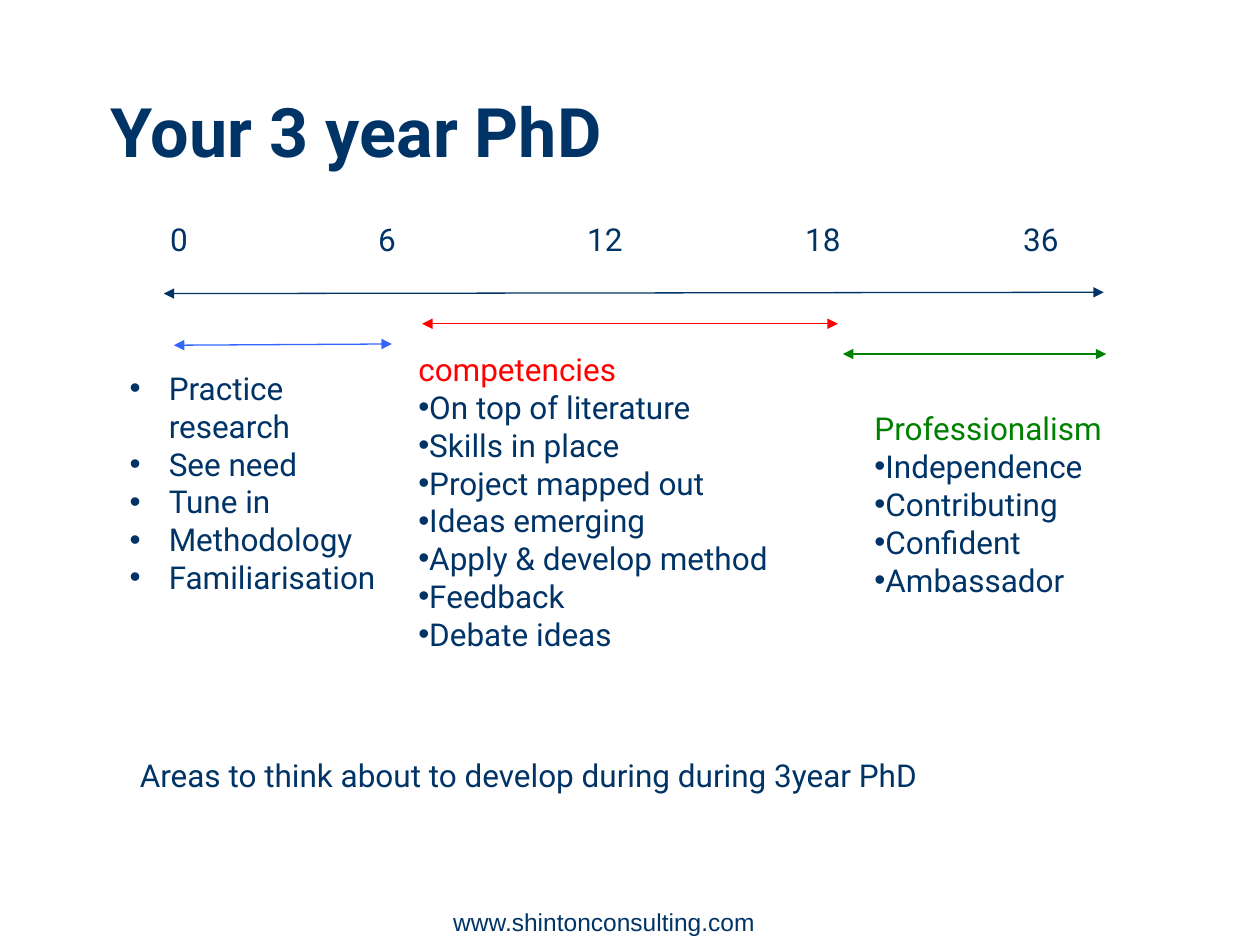
from lxml import etree
from pptx import Presentation
from pptx.dml.color import RGBColor
from pptx.enum.shapes import MSO_CONNECTOR
from pptx.enum.text import MSO_ANCHOR, MSO_AUTO_SIZE, PP_ALIGN
from pptx.oxml.ns import qn
from pptx.util import Inches, Pt

STRAIGHT = MSO_CONNECTOR.STRAIGHT
BOTTOM = MSO_ANCHOR.BOTTOM
FIT_SHAPE = MSO_AUTO_SIZE.SHAPE_TO_FIT_TEXT
NO_FIT = MSO_AUTO_SIZE.NONE
CENTER = PP_ALIGN.CENTER

NAVY = RGBColor(0x00, 0x33, 0x66)
RED = RGBColor(0xFF, 0x00, 0x00)
BLUE = RGBColor(0x33, 0x66, 0xFF)
GREEN = RGBColor(0x00, 0x80, 0x00)

MONTHS = [("0", 1.3, 0.25), ("6", 2.95, 0.25), ("12", 4.61, 0.39),
          ("18", 6.34, 0.39), ("36", 8.07, 0.39)]
# Start and end points of the whole timeline and of its three stages
SPANS = [((1.3, 2.33), (8.76, 2.32), NAVY),
         ((1.38, 2.74), (3.11, 2.73), BLUE),
         ((3.35, 2.57), (6.65, 2.57), RED),
         ((6.69, 2.81), (8.78, 2.81), GREEN)]

EARLY_STEPS = ["Practice research", "See need", "Tune in", "Methodology",
               "Familiarisation"]
COMPETENCIES = ["On top of literature", "Skills in place", "Project mapped out",
                "Ideas emerging", "Apply & develop method", "Feedback",
                "Debate ideas"]
PROFESSIONALISM = ["Independence", "Contributing", "Confident", "Ambassador"]


def add_frame(slide, box, wrap=True, fit=FIT_SHAPE):
    frame = slide.shapes.add_textbox(*map(Inches, box)).text_frame
    frame.margin_left = frame.margin_right = Inches(0.05)
    frame.margin_top = frame.margin_bottom = Inches(0.05)
    frame.word_wrap = wrap
    frame.auto_size = fit
    return frame


def write(paragraph, text, color=NAVY, size=18, font="Roboto", bold=False):
    paragraph.text = text
    paragraph.font.name = font
    paragraph.font.size = Pt(size)
    paragraph.font.bold = bold
    paragraph.font.color.rgb = color


def add_bullet(paragraph, hang):
    properties = paragraph._p.get_or_add_pPr()
    properties.set("marL", str(Inches(hang)))
    properties.set("indent", str(-Inches(hang)))
    etree.SubElement(properties, qn("a:buFont"), typeface="Arial")
    etree.SubElement(properties, qn("a:buChar"), char="•")


def add_title(slide, box):
    frame = add_frame(slide, box, fit=NO_FIT)
    frame.vertical_anchor = BOTTOM
    title = frame.paragraphs[0]
    title.line_spacing = 0.9
    write(title, "Your 3 year PhD", size=39, bold=True)


def add_label(slide, box, text):
    write(add_frame(slide, box, wrap=False).paragraphs[0], text)


def add_span(slide, start, end, color):
    """Draw a thin line with an arrowhead at both ends."""
    span = slide.shapes.add_connector(STRAIGHT, *map(Inches, start + end))
    span.line.color.rgb = color
    span.line.width = Pt(0.75)
    outline = span.line._get_or_add_ln()
    for tag in ("a:headEnd", "a:tailEnd"):
        etree.SubElement(outline, qn(tag), type="triangle")
    etree.SubElement(span._element.spPr, qn("a:effectLst"))


def add_timeline(slide, top):
    for month, left, width in MONTHS:
        add_label(slide, (left, top, width, 0.41), month)
    for start, end, color in SPANS:
        add_span(slide, start, end, color)


def add_stage(slide, box, items, heading=None, color=NAVY, hang=0):
    """List the items of one stage under an optional coloured heading."""
    frame = add_frame(slide, box)
    paragraph = frame.paragraphs[0]
    if heading:
        write(paragraph, heading, color)
        paragraph = frame.add_paragraph()
    for index, item in enumerate(items):
        if index:
            paragraph = frame.add_paragraph()
        add_bullet(paragraph, hang)
        write(paragraph, item)


def add_footer(slide, box):
    frame = add_frame(slide, box)
    frame.vertical_anchor = BOTTOM
    address = frame.paragraphs[0]
    address.alignment = CENTER
    write(address, "www.shintonconsulting.com", size=14, font="Arial")


def main():
    deck = Presentation()
    deck.slide_width, deck.slide_height = Inches(10), Inches(7.5)
    slide = deck.slides.add_slide(deck.slide_layouts[6])
    add_title(slide, (0.83, 0.17, 8.75, 1.25))
    add_timeline(slide, 1.7)
    add_stage(slide, (0.98, 2.88, 2.13, 2.54), EARLY_STEPS, hang=0.31)
    add_stage(slide, (3.27, 2.73, 3.7, 2.54), COMPETENCIES, "competencies", RED)
    add_stage(slide, (6.89, 3.2, 2.36, 1.93), PROFESSIONALISM,
              "Professionalism", GREEN)
    add_label(slide, (1.06, 5.95, 6.36, 0.41),
              "Areas to think about to develop during during 3year PhD")
    add_footer(slide, (3.21, 7.16, 3.17, 0.32))
    deck.save("out.pptx")


if __name__ == "__main__":
    main()
